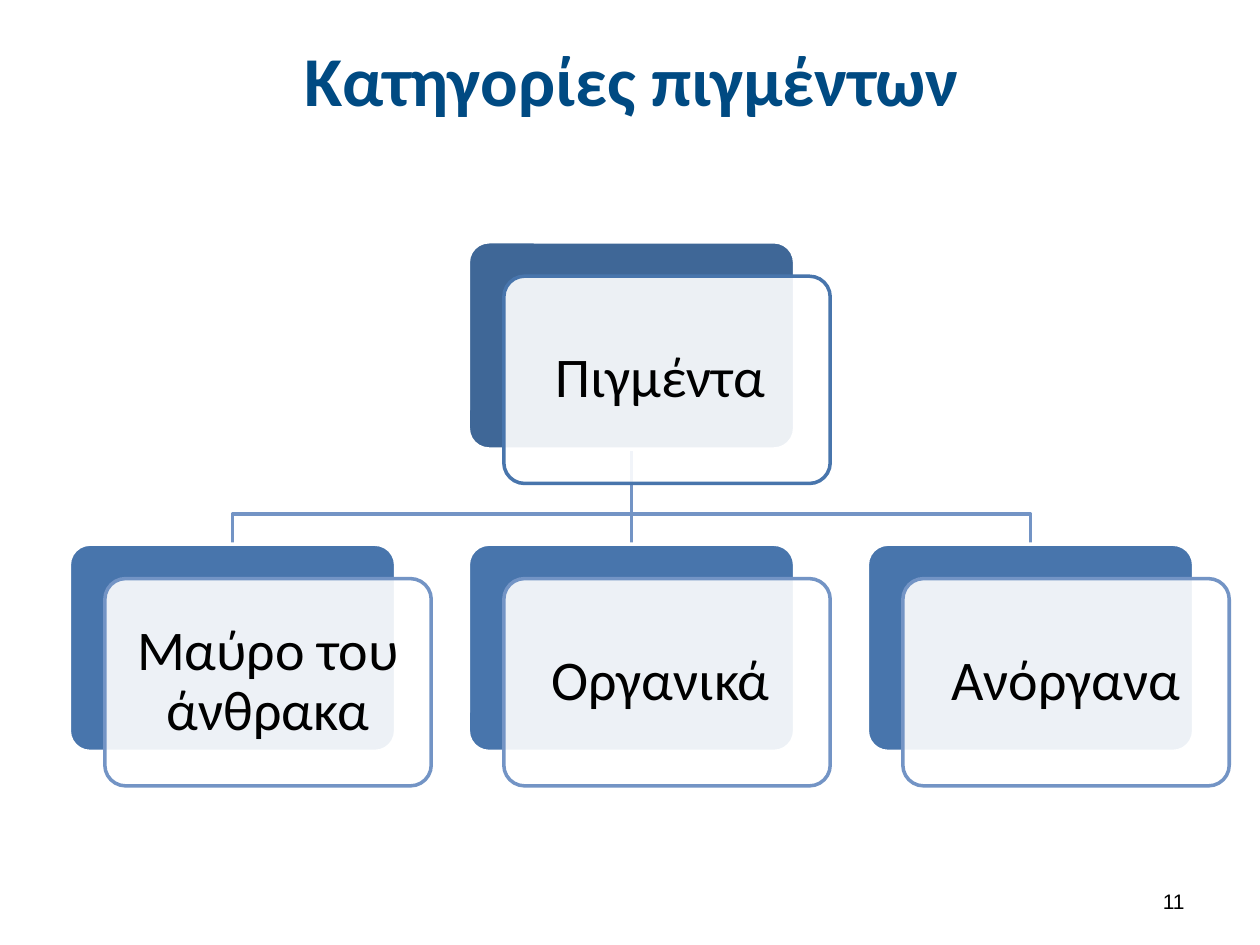
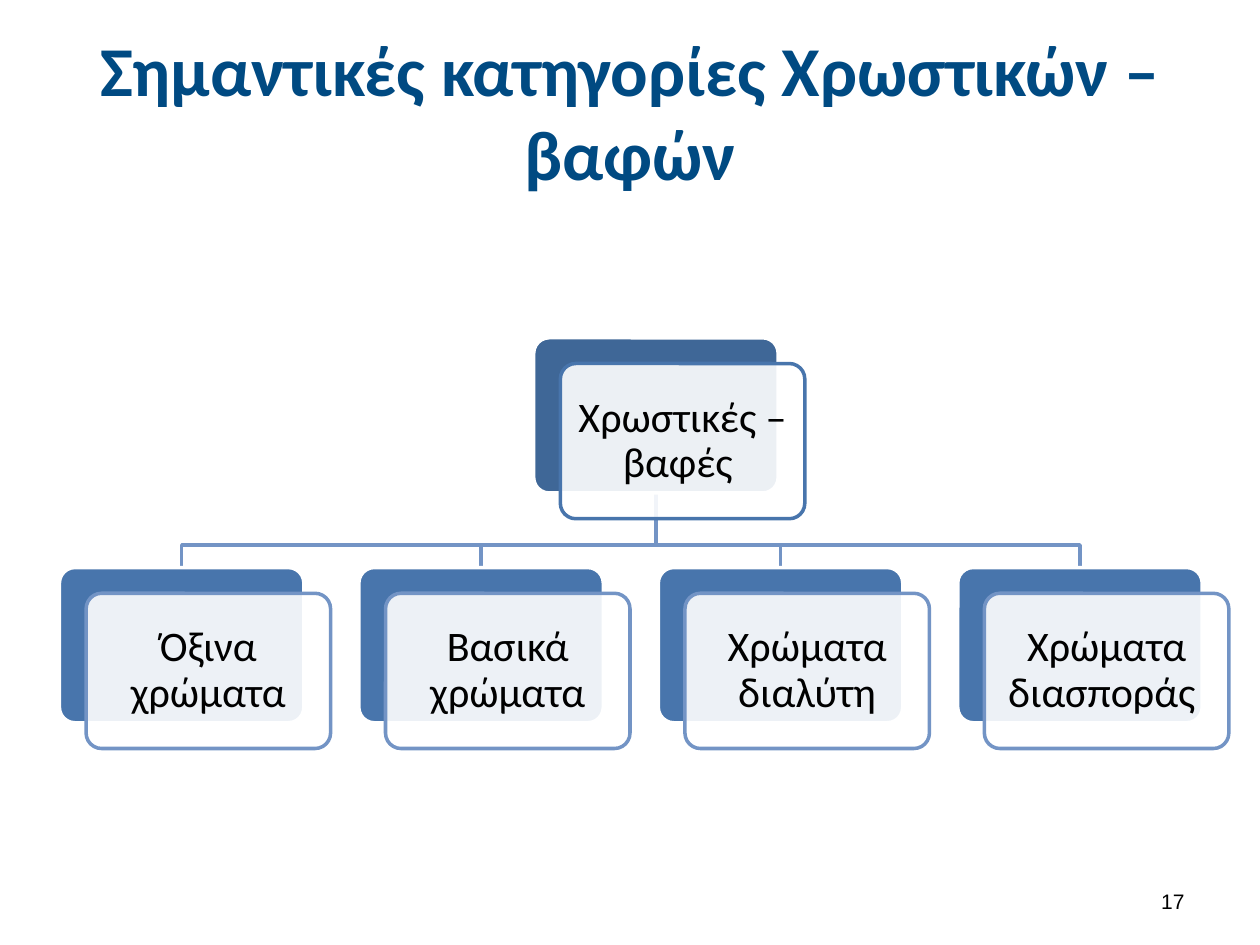
"""Build two slides that show categories of pigments and dyes as hierarchies."""
from dataclasses import dataclass

from lxml.etree import SubElement
from pptx import Presentation
from pptx.dml.color import RGBColor
from pptx.enum.shapes import MSO_CONNECTOR, MSO_SHAPE
from pptx.enum.text import MSO_ANCHOR, MSO_AUTO_SIZE, PP_ALIGN
from pptx.oxml.ns import qn
from pptx.util import Pt

TITLE_BLUE = RGBColor(0x00, 0x4A, 0x82)
ROOT_BLUE = RGBColor(0x3F, 0x67, 0x97)
CHILD_BLUE = RGBColor(0x48, 0x75, 0xAC)
LINK_BLUE = RGBColor(0x73, 0x94, 0xC5)
WHITE = RGBColor(0xFF, 0xFF, 0xFF)
BLACK = RGBColor(0x00, 0x00, 0x00)

HEADING_FONT = "Calibri"
NUMBER_FONT = "Arial"
LINE_WIDTH = Pt(2)
CARD_ASPECT = 0.635
CARD_SHIFT_X = 0.109
CARD_SHIFT_Y = 0.166
BEND_RATIO = 0.145
INSET_RATIO = 0.3


@dataclass(frozen=True)
class Box:
    """A rectangle measured in points."""

    left: float
    top: float
    width: float
    height: float

    @property
    def center(self) -> float:
        return self.left + self.width / 2

    @property
    def bottom(self) -> float:
        return self.top + self.height

    def lengths(self) -> tuple:
        return Pt(self.left), Pt(self.top), Pt(self.width), Pt(self.height)


@dataclass(frozen=True)
class Node:
    """A hierarchy entry: a coloured panel under a translucent text card."""

    text: str
    panel: Box
    panel_color: RGBColor
    border_color: RGBColor


@dataclass(frozen=True)
class Hierarchy:
    """A slide with one root category above an even row of children."""

    title: str
    title_box: Box
    number: str
    root: str
    children: tuple[str, ...]
    root_left: float
    root_top: float
    first_left: float
    child_top: float
    pitch: float
    card_width: float
    font_size: int

    def panel(self, left: float, top: float) -> Box:
        return Box(left, top, self.card_width, self.card_width * CARD_ASPECT)

    def root_node(self) -> Node:
        return Node(self.root, self.panel(self.root_left, self.root_top), ROOT_BLUE, CHILD_BLUE)

    def child_nodes(self) -> list[Node]:
        return [
            Node(text, self.panel(self.first_left + index * self.pitch, self.child_top),
                 CHILD_BLUE, LINK_BLUE)
            for index, text in enumerate(self.children)
        ]


NUMBER_BOX = Box(516, 500.4, 168, 28.8)

HIERARCHIES = (
    Hierarchy(
        title="Κατηγορίες πιγμέντων",
        title_box=Box(36.7, 9.4, 648, 71.3),
        number="11",
        root="Πιγμέντα ",
        children=("Μαύρο του άνθρακα", "Οργανικά ", "Ανόργανα"),
        root_left=267.6, root_top=138.2, first_left=39.6, child_top=311,
        pitch=228, card_width=186.5, font_size=32,
    ),
    Hierarchy(
        title="Σημαντικές κατηγορίες Χρωστικών – βαφών",
        title_box=Box(0, 9.4, 720, 108),
        number="17",
        root="Χρωστικές – βαφές ",
        children=("Όξινα χρώματα", "Βασικά χρώματα", "Χρώματα διαλύτη", "Χρώματα διασποράς "),
        root_left=305, root_top=193, first_left=34, child_top=324.3,
        pitch=171.1, card_width=139.7, font_size=24,
    ),
)


def format_text(text_frame, text: str, font_name: str, size: int, color: RGBColor,
                alignment: PP_ALIGN, bold: bool = False) -> None:
    """Write one middle-anchored paragraph and format its run."""
    text_frame.text = text
    text_frame.word_wrap = True
    text_frame.auto_size = MSO_AUTO_SIZE.NONE
    text_frame.vertical_anchor = MSO_ANCHOR.MIDDLE
    paragraph = text_frame.paragraphs[0]
    paragraph.alignment = alignment
    font = paragraph.runs[0].font
    font.name, font.size, font.bold = font_name, Pt(size), bold
    font.color.rgb = color


def add_title(slide, hierarchy: Hierarchy) -> None:
    """Place and format the title placeholder."""
    title = slide.shapes.title
    title.left, title.top, title.width, title.height = hierarchy.title_box.lengths()
    format_text(title.text_frame, hierarchy.title, HEADING_FONT, 40, TITLE_BLUE,
                PP_ALIGN.CENTER, bold=True)


def add_number(slide, number: str) -> None:
    """Write the slide number at the lower right."""
    textbox = slide.shapes.add_textbox(*NUMBER_BOX.lengths())
    format_text(textbox.text_frame, number, NUMBER_FONT, 12, BLACK, PP_ALIGN.RIGHT)


def add_rounded(slide, box: Box, fill: RGBColor, border: RGBColor):
    """Draw a rounded rectangle without shadow."""
    shape = slide.shapes.add_shape(MSO_SHAPE.ROUNDED_RECTANGLE, *box.lengths())
    shape.adjustments[0] = 0.1
    shape.shadow.inherit = False
    shape.fill.solid()
    shape.fill.fore_color.rgb = fill
    shape.line.color.rgb = border
    shape.line.width = LINE_WIDTH
    return shape


def add_node(slide, node: Node, font_size: int):
    """Draw a panel with its text card and return the panel."""
    box = node.panel
    panel = add_rounded(slide, box, node.panel_color, WHITE)
    card_box = Box(box.left + CARD_SHIFT_X * box.width, box.top + CARD_SHIFT_Y * box.height,
                   box.width, box.height)
    card = add_rounded(slide, card_box, WHITE, node.border_color)
    fill_color = card.element.spPr.find(qn("a:solidFill"))[0]
    SubElement(fill_color, qn("a:alpha"), val="90000")
    text_frame = card.text_frame
    format_text(text_frame, node.text, HEADING_FONT, font_size, BLACK, PP_ALIGN.CENTER)
    text_frame.paragraphs[0].line_spacing = 0.9
    inset = Pt(INSET_RATIO * font_size)
    text_frame.margin_left = text_frame.margin_right = inset
    text_frame.margin_top = text_frame.margin_bottom = inset
    return panel


def add_straight_link(slide, root_panel, child_panel):
    """Join the root to the child directly below it."""
    link = slide.shapes.add_connector(MSO_CONNECTOR.STRAIGHT, 0, 0, 0, 0)
    link.begin_connect(root_panel, 2)
    link.end_connect(child_panel, 0)
    SubElement(link.element.spPr, qn("a:effectLst"))
    return link


def add_bent_link(slide, root: Box, child: Box):
    """Draw a two-bend line from the root to a child at its side."""
    bend = Pt(child.top - BEND_RATIO * child.height)
    builder = slide.shapes.build_freeform(Pt(root.center), Pt(root.bottom))
    builder.add_line_segments(
        [(Pt(root.center), bend), (Pt(child.center), bend), (Pt(child.center), Pt(child.top))],
        close=False,
    )
    link = builder.convert_to_shape()
    link.shadow.inherit = False
    link.fill.background()
    return link


def add_hierarchy(slide, hierarchy: Hierarchy) -> None:
    """Draw all nodes and put their links behind them."""
    root = hierarchy.root_node()
    root_panel = add_node(slide, root, hierarchy.font_size)
    for child in hierarchy.child_nodes():
        child_panel = add_node(slide, child, hierarchy.font_size)
        if abs(child.panel.center - root.panel.center) < 1:
            link = add_straight_link(slide, root_panel, child_panel)
        else:
            link = add_bent_link(slide, root.panel, child.panel)
        link.line.color.rgb = LINK_BLUE
        link.line.width = LINE_WIDTH
        root_panel.element.addprevious(link.element)


def main() -> None:
    """Create the presentation and save it."""
    presentation = Presentation()
    presentation.slide_width, presentation.slide_height = Pt(720), Pt(540)
    title_only = presentation.slide_layouts[5]
    for hierarchy in HIERARCHIES:
        slide = presentation.slides.add_slide(title_only)
        add_title(slide, hierarchy)
        add_hierarchy(slide, hierarchy)
        add_number(slide, hierarchy.number)
    presentation.save("out.pptx")


if __name__ == "__main__":
    main()
